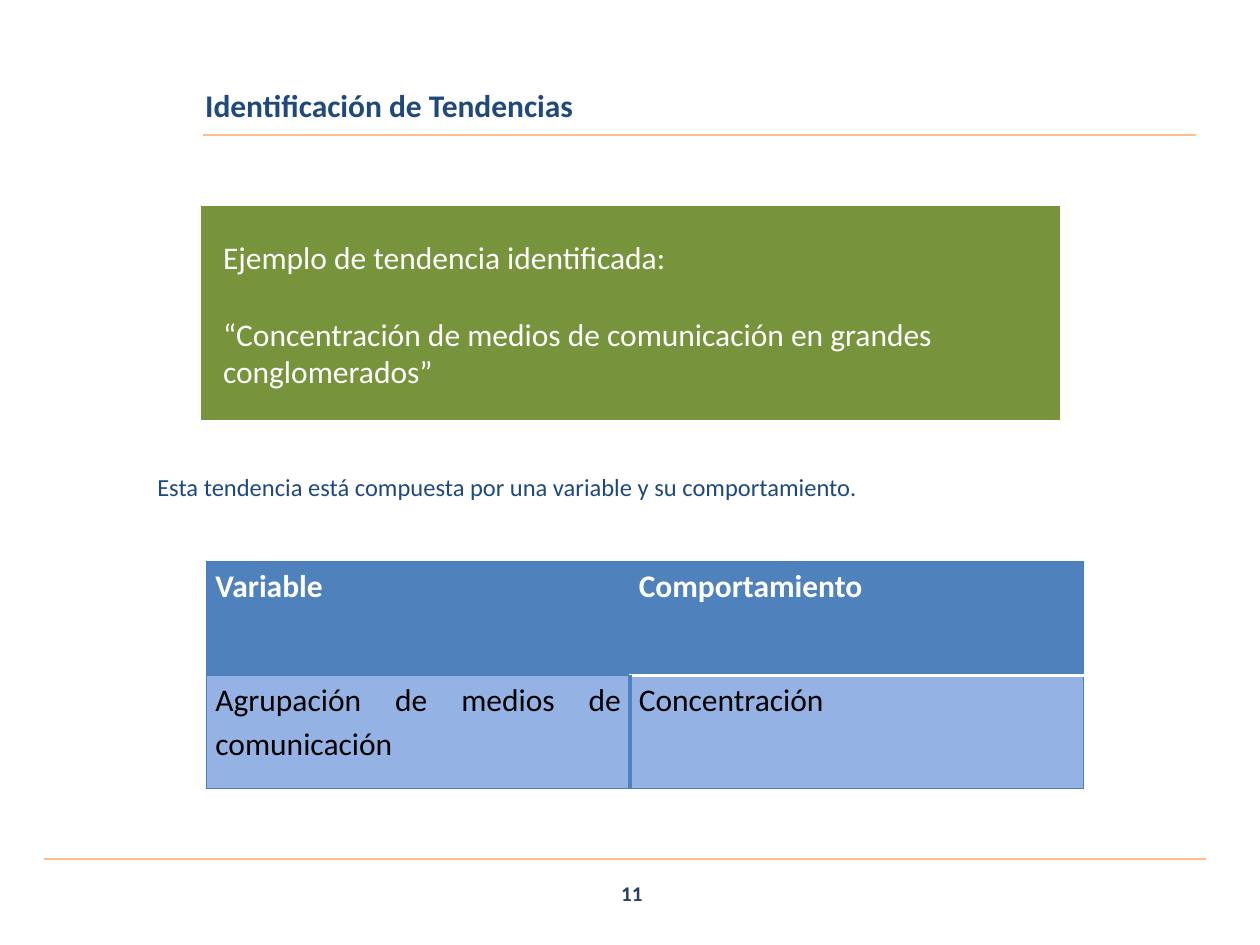
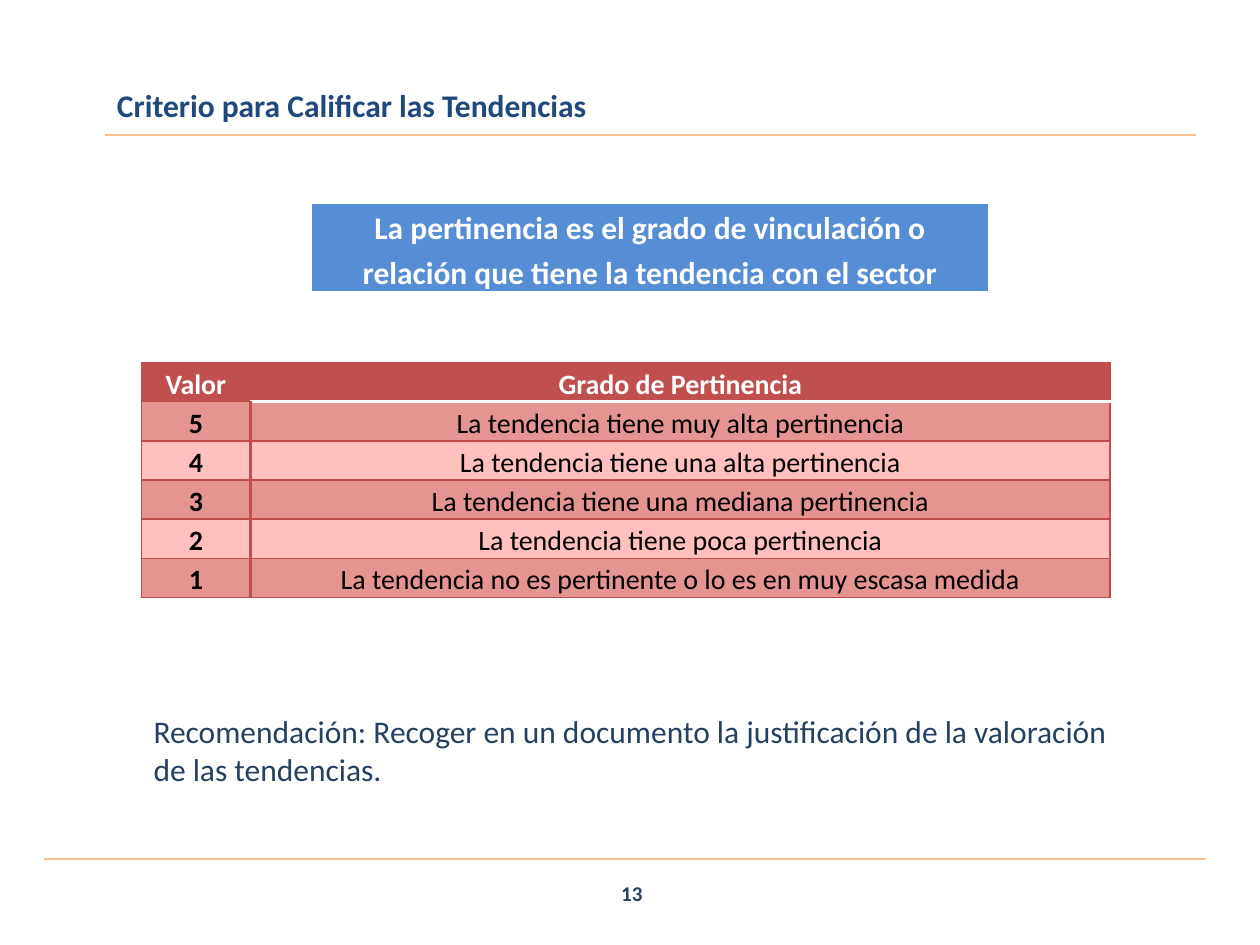
from dataclasses import dataclass

from lxml import etree
from pptx import Presentation
from pptx.dml.color import RGBColor
from pptx.enum.shapes import MSO_CONNECTOR, MSO_SHAPE
from pptx.enum.text import MSO_ANCHOR, PP_ALIGN
from pptx.oxml.ns import qn
from pptx.util import Inches, Pt

LEFT, CENTER, JUSTIFY = PP_ALIGN.LEFT, PP_ALIGN.CENTER, PP_ALIGN.JUSTIFY
TOP, MIDDLE = MSO_ANCHOR.TOP, MSO_ANCHOR.MIDDLE
STRAIGHT, RECTANGLE = MSO_CONNECTOR.STRAIGHT, MSO_SHAPE.RECTANGLE

FONT = "Calibri"
WHITE, BLACK = "FFFFFF", "000000"
TITLE_BLUE, NAVY, RULE_ORANGE = "1F497D", "254061", "FAC090"
GREEN, CALLOUT_BLUE = "77933C", "558ED5"
RULE_RIGHT = 9.49


@dataclass(frozen=True)
class Area:
    left: float
    top: float
    width: float
    height: float

    def lengths(self) -> tuple:
        return tuple(Inches(n) for n in (self.left, self.top, self.width, self.height))


@dataclass(frozen=True)
class Border:
    color: str
    points: float


@dataclass(frozen=True)
class GridStyle:
    accent: str
    edge: str
    bands: tuple[str, ...]
    size: int
    align: PP_ALIGN
    anchor: MSO_ANCHOR
    side_inset: float
    bold_first_column: bool = False


BLUE_GRID = GridStyle("4F81BD", "4B7EBC", ("94B2E4",), 18, JUSTIFY, TOP, 0.07)
RED_GRID = GridStyle("C0504D", "BF4C48", ("E69492", "FFC0BE"), 16, CENTER, MIDDLE, 0.05, True)


def rgb(color: str) -> RGBColor:
    return RGBColor.from_string(color)


def write_text(frame, *lines: str, size: int = 18, color: str = WHITE, bold: bool = False,
               align: PP_ALIGN = LEFT, before: float = 0, gap: float = 0,
               spacing: float = 1.0) -> None:
    for index, line in enumerate(lines):
        para = frame.add_paragraph() if index else frame.paragraphs[0]
        para.alignment = align
        para.line_spacing = spacing
        para.space_before = Pt(gap if index else before)
        span = para.add_run()
        span.text = line
        span.font.name = FONT
        span.font.size = Pt(size)
        span.font.bold = bold
        span.font.color.rgb = rgb(color)


def add_text(page, area: Area, *lines: str, anchor: MSO_ANCHOR = MIDDLE,
             inset: tuple[float, float] = (0.1, 0.05), **text_format) -> None:
    frame = page.shapes.add_textbox(*area.lengths()).text_frame
    frame.word_wrap = True
    frame.vertical_anchor = anchor
    frame.margin_left = frame.margin_right = Inches(inset[0])
    frame.margin_top = frame.margin_bottom = Inches(inset[1])
    write_text(frame, *lines, **text_format)


def add_rule(page, left: float, right: float, top: float) -> None:
    rule = page.shapes.add_connector(
        STRAIGHT, Inches(left), Inches(top), Inches(right), Inches(top))
    rule.line.color.rgb = rgb(RULE_ORANGE)
    rule.line.width = Pt(1.25)
    etree.SubElement(rule._element.spPr, qn("a:effectLst"))


def add_page(deck, title: str, title_area: Area, rule_left: float, number: int):
    page = deck.slides.add_slide(deck.slide_layouts[6])
    add_text(page, title_area, title, color=TITLE_BLUE, bold=True, before=3.6)
    add_rule(page, rule_left, RULE_RIGHT, 1.07)
    add_rule(page, 0.35, 9.57, 6.82)
    add_text(page, Area(3.85, 6.89, 2.33, 0.4), str(number),
             size=12, color=NAVY, bold=True, align=CENTER)
    return page


def set_borders(cell, borders: dict[str, Border]) -> None:
    properties = cell._tc.get_or_add_tcPr()
    for side in "LRTB":
        line = etree.SubElement(properties, qn(f"a:ln{side}"))
        if side in borders:
            line.set("w", str(Pt(borders[side].points)))
            fill = etree.SubElement(line, qn("a:solidFill"))
            etree.SubElement(fill, qn("a:srgbClr")).set("val", borders[side].color)
        else:
            etree.SubElement(line, qn("a:noFill"))


def fill_cell(cell, text: str, fill: str, borders: dict[str, Border],
              side_inset: float, anchor: MSO_ANCHOR, **text_format) -> None:
    set_borders(cell, borders)
    cell.fill.solid()
    cell.fill.fore_color.rgb = rgb(fill)
    cell.margin_left = cell.margin_right = Inches(side_inset)
    cell.margin_top = cell.margin_bottom = 0
    cell.vertical_anchor = anchor
    write_text(cell.text_frame, text, spacing=1.15, **text_format)


def new_table(page, left: float, top: float, widths: tuple[float, ...],
              row_height: float, row_count: int):
    area = Area(left, top, sum(widths), row_height * row_count)
    table = page.shapes.add_table(row_count, len(widths), *area.lengths()).table
    table.first_row = table.horz_banding = False
    for column, width in zip(table.columns, widths):
        column.width = Inches(width)
    return table


def grid_borders(style: GridStyle, row: int, column: int) -> dict[str, Border]:
    borders = dict.fromkeys("LRTB", Border(style.edge, 0.75))
    borders["L" if column else "R"] = Border(style.accent, 2 if row else 0.75)
    if column and row < 2:
        borders["T" if row else "B"] = Border(WHITE, 2)
    return borders


def add_grid(page, left: float, top: float, widths: tuple[float, ...], row_height: float,
             rows: list[tuple[str, str]], style: GridStyle) -> None:
    table = new_table(page, left, top, widths, row_height, len(rows))
    for row, texts in enumerate(rows):
        header = row == 0
        fill = style.accent if header else style.bands[(row - 1) % len(style.bands)]
        for column, text in enumerate(texts):
            fill_cell(table.cell(row, column), text, fill, grid_borders(style, row, column),
                      style.side_inset, style.anchor, size=style.size, align=style.align,
                      color=WHITE if header else BLACK,
                      bold=header or (style.bold_first_column and column == 0))


def build_identification(deck) -> None:
    page = add_page(deck, "Identificación de Tendencias", Area(1.53, 0.6, 8.11, 0.47), 1.61, 11)
    panel = page.shapes.add_shape(RECTANGLE, *Area(1.58, 1.62, 6.85, 1.73).lengths())
    panel.shadow.inherit = False
    panel.fill.solid()
    panel.fill.fore_color.rgb = rgb(GREEN)
    panel.line.color.rgb = rgb(WHITE)
    panel.line.width = Pt(2)
    add_text(page, Area(1.72, 1.73, 6.85, 1.53),
             "Ejemplo de tendencia identificada:",
             "“Concentración de medios de comunicación en grandes conglomerados”",
             inset=(0.05, 0.05), gap=22)
    add_text(page, Area(1.15, 3.7, 7.24, 0.34),
             "Esta tendencia está compuesta por una variable y su comportamiento.",
             anchor=TOP, size=14, color=TITLE_BLUE)
    rows = [
        ("Variable", "Comportamiento"),
        ("Agrupación de medios de comunicación", "Concentración"),
    ]
    add_grid(page, 1.64, 4.46, (3.36, 3.6), 0.9, rows, BLUE_GRID)


def build_criterion(deck) -> None:
    page = add_page(deck, "Criterio para Calificar las Tendencias",
                    Area(0.83, 0.68, 6.61, 0.3), 0.83, 13)
    callout = new_table(page, 2.48, 1.62, (5.36,), 0.69, 1)
    fill_cell(callout.cell(0, 0),
              "La pertinencia es el grado de vinculación o relación "
              "que tiene la tendencia con el sector",
              CALLOUT_BLUE, {}, 0.05, MIDDLE, bold=True, align=CENTER)
    rows = [
        ("Valor", "Grado de Pertinencia"),
        ("5", "La tendencia tiene muy alta pertinencia"),
        ("4", "La tendencia tiene una alta pertinencia"),
        ("3", "La tendencia tiene una mediana pertinencia"),
        ("2", "La tendencia tiene poca pertinencia"),
        ("1", "La tendencia no es pertinente o lo es en muy escasa medida"),
    ]
    add_grid(page, 1.12, 2.88, (0.87, 6.82), 0.31, rows, RED_GRID)
    add_text(page, Area(1.12, 5.6, 7.95, 0.71),
             "Recomendación: Recoger en un documento la justificación de la valoración "
             "de las tendencias.", anchor=TOP, color=NAVY)


def main() -> None:
    deck = Presentation()
    deck.slide_width, deck.slide_height = Inches(10), Inches(7.5)
    build_identification(deck)
    build_criterion(deck)
    deck.save("out.pptx")


if __name__ == "__main__":
    main()
